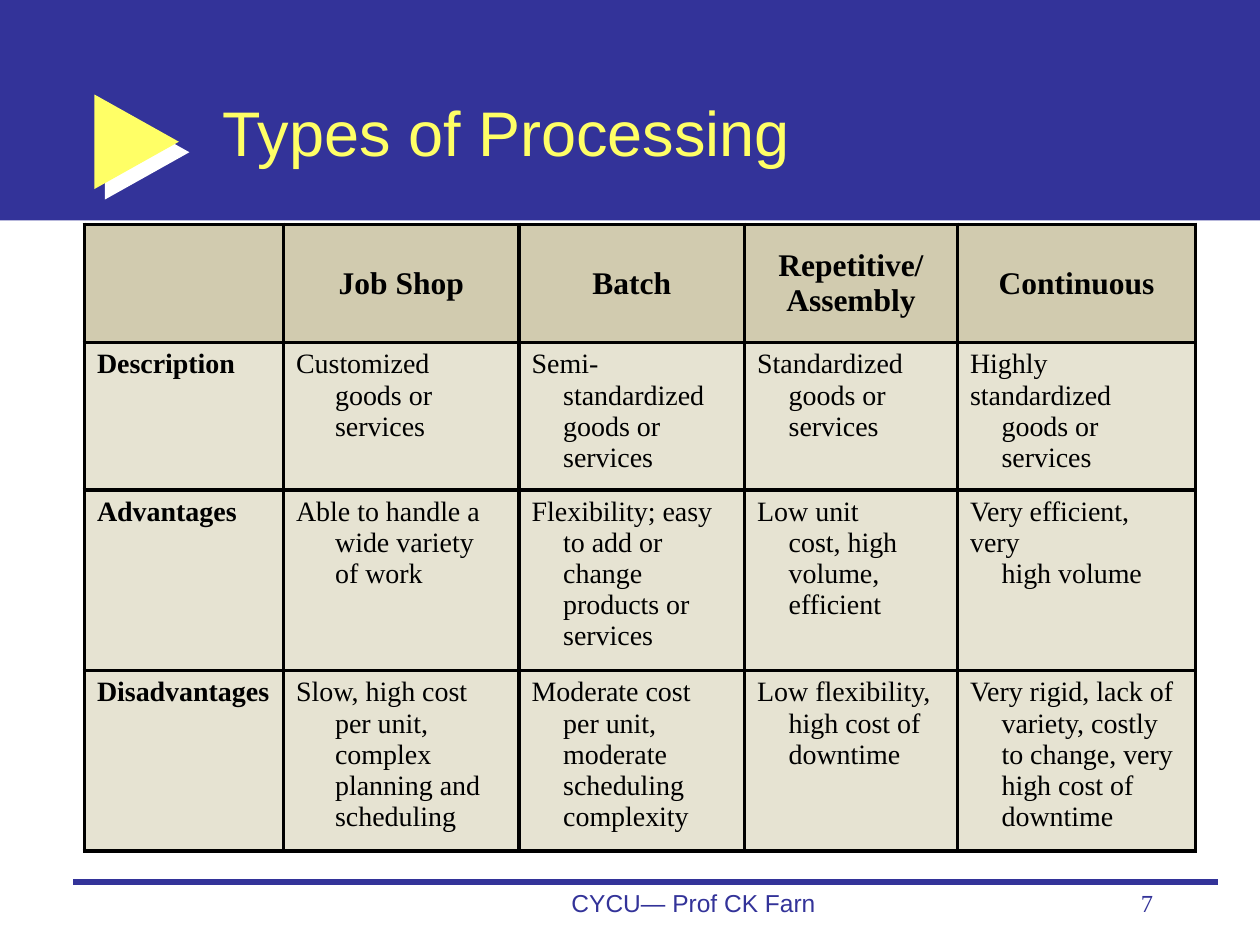
from dataclasses import dataclass

from lxml.etree import SubElement
from pptx import Presentation
from pptx.dml.color import RGBColor
from pptx.enum.shapes import MSO_CONNECTOR as Connector, MSO_SHAPE as Shape
from pptx.enum.text import MSO_ANCHOR as Anchor, PP_ALIGN as Align
from pptx.oxml import parse_xml
from pptx.oxml.ns import nsdecls, qn
from pptx.util import Pt

PX = 9144  # EMU per px, 100 px to the inch


@dataclass(frozen=True)
class Theme:
    blue: str = "333399"
    yellow: str = "FFFF66"
    white: str = "FFFFFF"
    black: str = "000000"
    header_fill: str = "D1CBAF"
    body_fill: str = "E6E3D2"
    sans: str = "Arial"
    serif: str = "Times New Roman"
    title_size: int = 36
    header_size: int = 18
    body_size: int = 16
    footer_size: int = 14
    border: float = 2.25
    rule: int = 3


THEME = Theme()

COLUMN_WIDTHS = [158, 187, 179, 169, 189]
ROW_HEIGHTS = [94, 117, 143, 143]
INDENTS = [0, 31, 25, 25, 25]
# Each line of a cell is a paragraph
ROWS = [
    ["", "Job Shop", "Batch", "Repetitive/\nAssembly", "Continuous"],
    ["Description",
     "Customized\ngoods or\nservices",
     "Semi-\nstandardized\ngoods or\nservices",
     "Standardized\ngoods or\nservices",
     "Highly standardized\ngoods or services"],
    ["Advantages",
     "Able to handle a\nwide variety\nof work",
     "Flexibility; easy\nto add or change products or services",
     "Low unit\ncost, high volume, efficient",
     "Very efficient, very\nhigh volume"],
    ["Disadvantages",
     "Slow, high cost\nper unit,\ncomplex\nplanning and\nscheduling",
     "Moderate cost\nper unit,\nmoderate\nscheduling\ncomplexity",
     "Low flexibility,\nhigh cost of downtime",
     "Very rigid, lack of\nvariety, costly to change, very high cost of downtime"],
]


def emu(*lengths):
    return [length * PX for length in lengths]


def color(value):
    return RGBColor.from_string(value)


def write_text(frame, text, *, font, size, fill, bold=False, align=Align.LEFT,
               indent=0):
    """Write one paragraph per line; lines after the first are indented."""
    for index, line in enumerate(text.split("\n")):
        paragraph = frame.add_paragraph() if index else frame.paragraphs[0]
        paragraph.alignment = align
        if index and indent:
            properties = paragraph._p.get_or_add_pPr()
            properties.set("marL", str(indent * PX))
            properties.set("indent", "0")
        run = paragraph.add_run()
        run.text = line
        run.font.name = font
        run.font.size = Pt(size)
        run.font.bold = bold
        run.font.color.rgb = color(fill)


def add_text(slide, box, text, anchor=Anchor.TOP, **text_format):
    frame = slide.shapes.add_textbox(*emu(*box)).text_frame
    frame.word_wrap = True
    frame.vertical_anchor = anchor
    write_text(frame, text, **text_format)


def add_filled_shape(slide, kind, box, fill):
    shape = slide.shapes.add_shape(kind, *emu(*box))
    shape.shadow.inherit = False
    shape.fill.solid()
    shape.fill.fore_color.rgb = color(fill)
    shape.line.fill.background()
    return shape


def add_header(slide, box):
    left, top, width, height = box
    add_filled_shape(slide, Shape.RECTANGLE, box, THEME.blue)

    # Arrow that is all head, with a hard offset shadow
    arrow = add_filled_shape(slide, Shape.RIGHT_ARROW,
                             (left + 75, top + 75, 67, 75), THEME.yellow)
    arrow.adjustments[0], arrow.adjustments[1] = 0.384, 1
    effects = arrow._element.spPr.find(qn("a:effectLst"))
    shadow = SubElement(effects, qn("a:outerShdw"), dist=str(Pt(8.5)),
                        dir=str(45 * 60000), algn="ctr", rotWithShape="0")
    SubElement(shadow, qn("a:srgbClr"), val=THEME.white)

    add_text(slide, (left + 167, top + 42, width - 242, height - 50),
             "Types of Processing", anchor=Anchor.MIDDLE, font=THEME.sans,
             size=THEME.title_size, fill=THEME.yellow)


def set_borders(cell):
    properties = cell._tc.get_or_add_tcPr()
    for index, side in enumerate(("lnL", "lnR", "lnT", "lnB")):
        properties.insert(index, parse_xml(
            f'<a:{side} {nsdecls("a")} w="{Pt(THEME.border)}"><a:solidFill>'
            f'<a:srgbClr val="{THEME.black}"/></a:solidFill></a:{side}>'))


def add_comparison_table(slide, box):
    table = slide.shapes.add_table(len(ROWS), len(COLUMN_WIDTHS),
                                   *emu(*box)).table
    table.first_row = table.horz_banding = False
    for column, width in zip(table.columns, COLUMN_WIDTHS):
        column.width = width * PX
    for row, height in zip(table.rows, ROW_HEIGHTS):
        row.height = height * PX

    for row_index, texts in enumerate(ROWS):
        header = row_index == 0
        for column_index, text in enumerate(texts):
            cell = table.cell(row_index, column_index)
            cell.fill.solid()
            cell.fill.fore_color.rgb = color(
                THEME.header_fill if header else THEME.body_fill)
            set_borders(cell)
            cell.vertical_anchor = Anchor.MIDDLE if header else Anchor.TOP
            if text:
                write_text(
                    cell.text_frame, text, font=THEME.serif, fill=THEME.black,
                    size=THEME.header_size if header else THEME.body_size,
                    bold=header or column_index == 0,
                    align=Align.CENTER if header else Align.LEFT,
                    indent=0 if header else INDENTS[column_index])


def add_footer(slide, box):
    left, top, width, height = box
    rule = slide.shapes.add_connector(Connector.STRAIGHT,
                                      *emu(left, top, left + width, top))
    rule.line.color.rgb = color(THEME.blue)
    rule.line.width = Pt(THEME.rule)
    SubElement(rule._element.spPr, qn("a:effectLst"))

    # Author and page number
    add_text(slide, (left + 334, top, 317, height), "CYCU— Prof CK Farn",
             font=THEME.sans, size=THEME.footer_size, fill=THEME.blue,
             align=Align.CENTER)
    add_text(slide, (left + 659, top, 208, height), "7", font=THEME.serif,
             size=THEME.footer_size, fill=THEME.blue, align=Align.RIGHT)


def main():
    presentation = Presentation()
    presentation.slide_width, presentation.slide_height = emu(1000, 750)
    slide = presentation.slides.add_slide(presentation.slide_layouts[6])
    add_header(slide, (0, 0, 1000, 175))
    add_comparison_table(
        slide, (67, 178, sum(COLUMN_WIDTHS), sum(ROW_HEIGHTS)))
    add_footer(slide, (58, 700, 909, 50))
    presentation.save("out.pptx")


if __name__ == "__main__":
    main()
